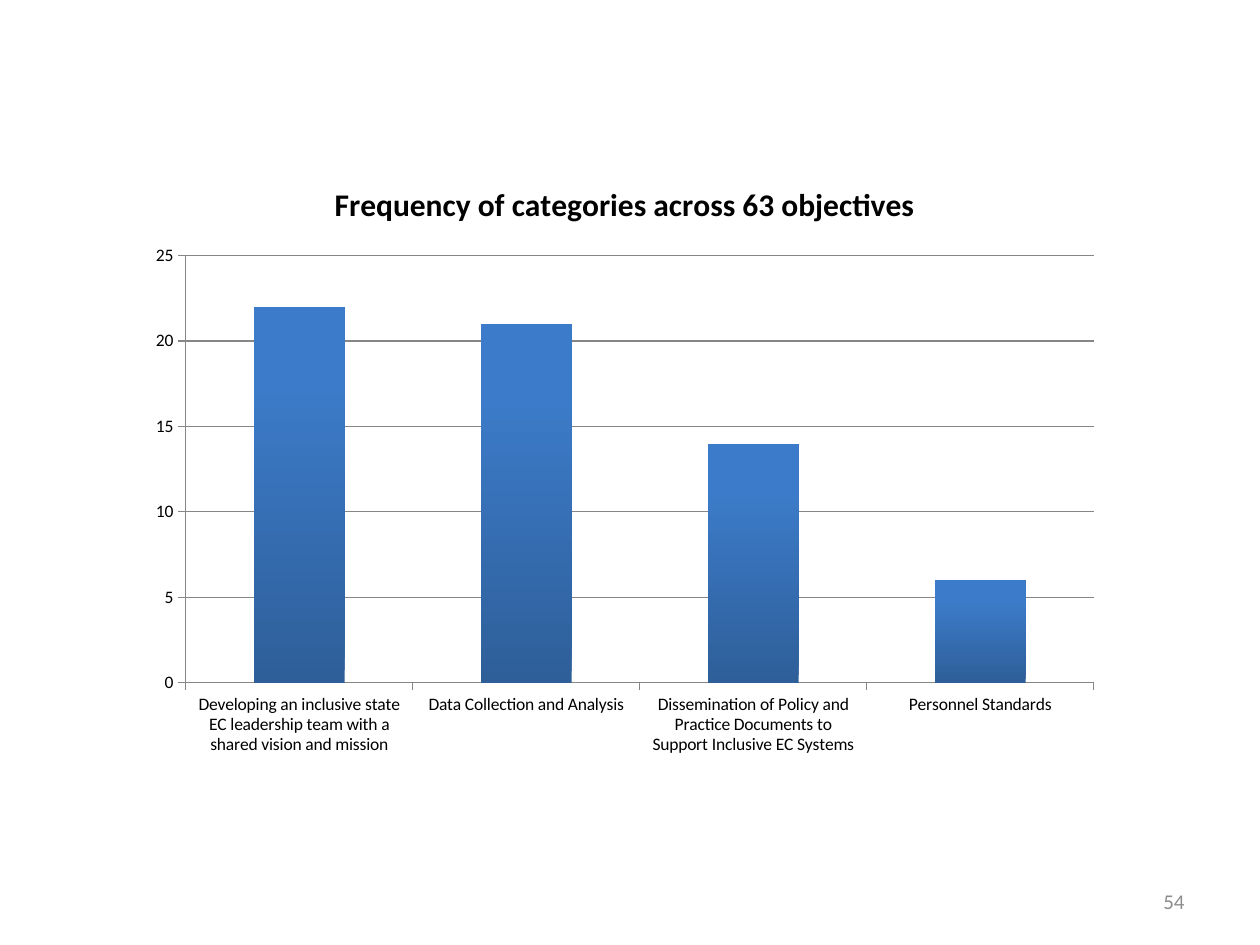
from pptx import Presentation
from pptx.chart.data import CategoryChartData
from pptx.dml.color import RGBColor
from pptx.enum.chart import XL_CHART_TYPE, XL_TICK_MARK
from pptx.enum.text import MSO_ANCHOR, PP_ALIGN
from pptx.util import Cm, Pt

BLACK = RGBColor(0x00, 0x00, 0x00)
GRAY = RGBColor(0x8C, 0x8C, 0x8C)
LINE = RGBColor(0x86, 0x86, 0x86)
DARK = RGBColor(0x2E, 0x5F, 0x99)
LIGHT = RGBColor(0x3C, 0x7B, 0xC9)
FONT = "Calibri"

COUNTS = {
    "Developing an inclusive state EC leadership team with a shared vision and mission": 22,
    "Data Collection and Analysis": 21,
    "Dissemination of Policy and Practice Documents to Support Inclusive EC Systems": 14,
    "Personnel Standards": 6,
}


def set_font(font, size, color, bold=False):
    font.name = FONT
    font.size = Pt(size)
    font.bold = bold
    font.color.rgb = color


def write(frame, text, size=12, color=BLACK, bold=False, align=PP_ALIGN.CENTER):
    par = frame.paragraphs[0]
    par.alignment = align
    run = par.add_run()
    run.text = text
    set_font(run.font, size, color, bold)


def style_line(line):
    line.color.rgb = LINE
    line.width = Pt(0.75)


def style_axis(axis):
    axis.major_tick_mark = XL_TICK_MARK.OUTSIDE
    axis.minor_tick_mark = XL_TICK_MARK.NONE
    style_line(axis.format.line)
    set_font(axis.tick_labels.font, 10, BLACK)


def add_bars(slide, left, top, width, height):
    data = CategoryChartData()
    data.categories = list(COUNTS)
    data.add_series("Series 1", list(COUNTS.values()))
    chart = slide.shapes.add_chart(
        XL_CHART_TYPE.COLUMN_CLUSTERED, left, top, width, height, data
    ).chart
    set_font(chart.font, 10, BLACK)
    chart.has_legend = False
    chart.has_title = True
    write(chart.chart_title.text_frame, "Frequency of categories across 63 objectives",
          size=18, bold=True)

    style_axis(chart.category_axis)
    scale = chart.value_axis
    style_axis(scale)
    scale.minimum_scale, scale.maximum_scale, scale.major_unit = 0, 25, 5
    scale.has_major_gridlines = True
    style_line(scale.major_gridlines.format.line)

    plot = chart.plots[0]
    plot.gap_width = 150
    plot.vary_by_categories = False
    fill = plot.series[0].format.fill
    fill.gradient()
    fill.gradient_angle = 90
    for stop, color, place in zip(fill.gradient_stops, (DARK, LIGHT), (0, 0.8)):
        stop.color.rgb = color
        stop.position = place


def add_number(slide, left, top, width, height):
    frame = slide.shapes.add_textbox(left, top, width, height).text_frame
    frame.word_wrap = True
    frame.vertical_anchor = MSO_ANCHOR.MIDDLE
    write(frame, "54", color=GRAY, align=PP_ALIGN.RIGHT)


def main():
    deck = Presentation()
    deck.slide_width, deck.slide_height = Cm(25.4), Cm(19.05)
    slide = deck.slides.add_slide(deck.slide_layouts[6])
    add_bars(slide, Cm(2.75), Cm(3.18), Cm(19.69), Cm(12.27))
    add_number(slide, Cm(18.2), Cm(17.65), Cm(5.93), Cm(1.02))
    deck.save("out.pptx")


if __name__ == "__main__":
    main()
